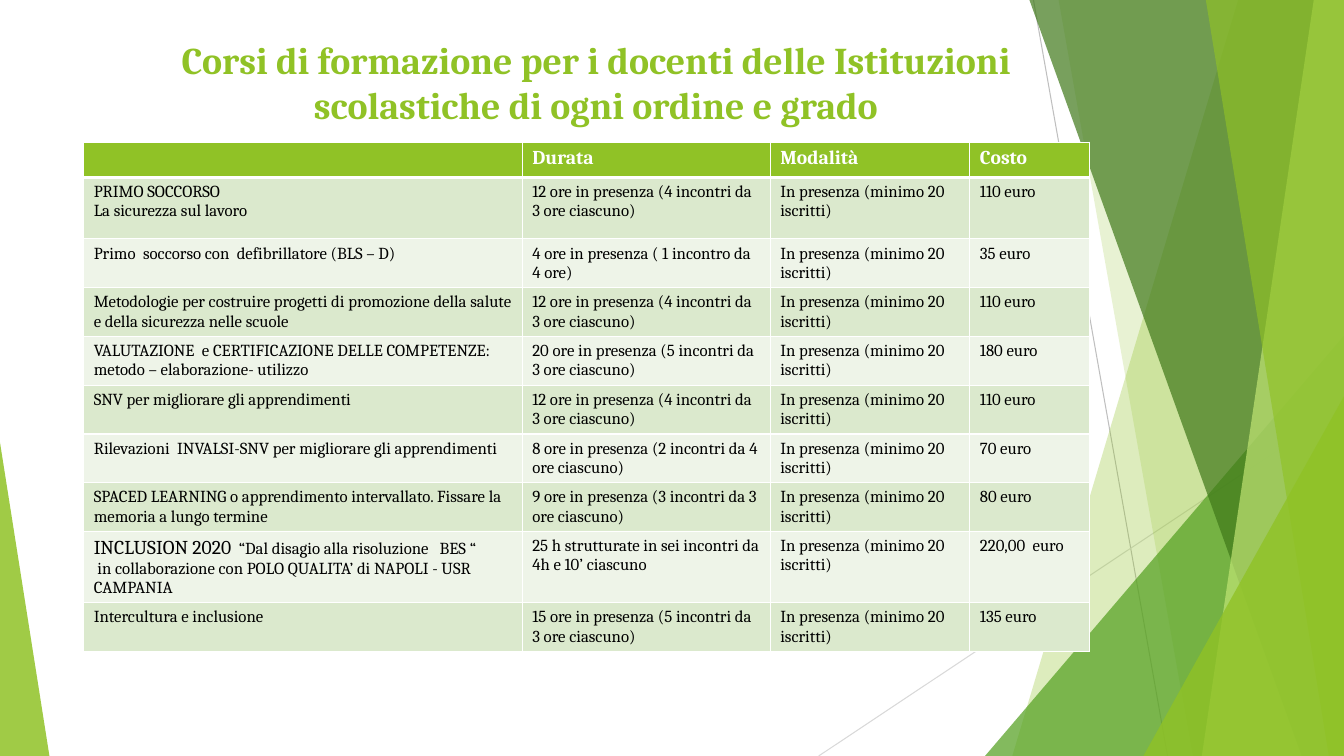
from dataclasses import dataclass

from lxml import etree
from pptx import Presentation
from pptx.dml.color import RGBColor
from pptx.enum.shapes import MSO_CONNECTOR, MSO_SHAPE
from pptx.enum.text import MSO_ANCHOR, PP_ALIGN
from pptx.oxml.ns import qn
from pptx.util import Inches, Pt

STRAIGHT = MSO_CONNECTOR.STRAIGHT
TRIANGLE = MSO_SHAPE.ISOSCELES_TRIANGLE
TOP = MSO_ANCHOR.TOP
CENTER = PP_ALIGN.CENTER

LIME = RGBColor(0x90, 0xC2, 0x26)
GREEN = RGBColor(0x54, 0xA0, 0x21)
FOREST = RGBColor(0x3F, 0x78, 0x19)
PALE_LIME = RGBColor(0xC0, 0xE4, 0x74)
BAND_DARK = RGBColor(0xDB, 0xE9, 0xCD)
BAND_LIGHT = RGBColor(0xEE, 0xF4, 0xE8)
GREY = RGBColor(0xBF, 0xBF, 0xBF)
LIGHT_GREY = RGBColor(0xD9, 0xD9, 0xD9)
WHITE = RGBColor(0xFF, 0xFF, 0xFF)
BLACK = RGBColor(0, 0, 0)

FONT = "Cambria"
WIDTH, HEIGHT = 13.33, 7.5


@dataclass
class Ray:
    start: tuple[float, float]
    end: tuple[float, float]
    color: RGBColor


@dataclass
class Panel:
    """A band reaching the right edge, with a slanted left side."""
    top_x: float
    bottom_x: float
    color: RGBColor
    opacity: int


@dataclass
class Corner:
    """A triangle standing on the bottom edge; apex is 0 (left) or 1 (right)."""
    left: float
    top: float
    width: float
    apex: int
    color: RGBColor
    opacity: int


@dataclass
class Course:
    name: str
    duration: str
    cost: str
    lead: str = ""


RAYS = [
    Ray((10.25, 0), (11.58, HEIGHT), GREY),
    Ray((WIDTH, 4.03), (8.12, HEIGHT), LIGHT_GREY),
]
FACETS = [
    Panel(12.28, 10.04, LIME, 30),
    Panel(10.5, 11.83, LIME, 20),
    Corner(9.77, 3.33, 3.56, 1, GREEN, 72),
    Panel(10.21, 12.91, FOREST, 70),
    Panel(13.03, 11.92, PALE_LIME, 70),
    Panel(11.96, 13.18, LIME, 65),
    Corner(11.34, 3.93, 1.99, 1, LIME, 80),
    Corner(0, 4.39, 0.49, 0, LIME, 85),
]

TITLE = "Corsi di formazione per i docenti delle Istituzioni scolastiche di ogni ordine e grado"
HEADINGS = ["", "Durata", "Modalità", "Costo"]
MODE = "In presenza (minimo 20 iscritti)"
COURSES = [
    Course("PRIMO SOCCORSO\nLa sicurezza sul lavoro",
           "12 ore in presenza (4 incontri da 3 ore ciascuno)", "110 euro"),
    Course("Primo  soccorso con  defibrillatore (BLS – D)",
           "4 ore in presenza ( 1 incontro da 4 ore)", "35 euro"),
    Course("Metodologie per costruire progetti di promozione della salute e della sicurezza nelle scuole",
           "12 ore in presenza (4 incontri da 3 ore ciascuno)", "110 euro"),
    Course("VALUTAZIONE  e CERTIFICAZIONE DELLE COMPETENZE: metodo – elaborazione- utilizzo",
           "20 ore in presenza (5 incontri da 3 ore ciascuno)", "180 euro"),
    Course("SNV per migliorare gli apprendimenti",
           "12 ore in presenza (4 incontri da 3 ore ciascuno)", "110 euro"),
    Course("Rilevazioni  INVALSI-SNV per migliorare gli apprendimenti",
           "8 ore in presenza (2 incontri da 4 ore ciascuno)", "70 euro"),
    Course("SPACED LEARNING o apprendimento intervallato. Fissare la memoria a lungo termine",
           "9 ore in presenza (3 incontri da 3 ore ciascuno)", "80 euro"),
    Course("  “Dal disagio alla risoluzione   BES “\n"
           " in collaborazione con POLO QUALITA’ di NAPOLI - USR CAMPANIA",
           "25 h strutturate in sei incontri da 4h e 10’ ciascuno", "220,00  euro",
           lead="INCLUSION 2020"),
    Course("Intercultura e inclusione",
           "15 ore in presenza (5 incontri da 3 ore ciascuno)", "135 euro"),
]
COLUMN_WIDTHS = [4.35, 2.46, 1.98, 1.19]
ROW_HEIGHTS = [0.35, 0.61] + [0.41] * (len(COURSES) - 1)


def draw_ray(page, ray: Ray) -> None:
    points = [Inches(value) for value in ray.start + ray.end]
    line = page.shapes.add_connector(STRAIGHT, *points)
    line.line.color.rgb = ray.color
    line.line.width = Pt(0.75)
    etree.SubElement(line._element.spPr, qn("a:effectLst"))


def draw_facet(page, facet: Panel | Corner) -> None:
    if isinstance(facet, Panel):
        builder = page.shapes.build_freeform(Inches(facet.top_x), 0)
        corners = [(WIDTH, 0), (WIDTH, HEIGHT), (facet.bottom_x, HEIGHT)]
        builder.add_line_segments([(Inches(x), Inches(y)) for x, y in corners], close=True)
        shape = builder.convert_to_shape()
    else:
        shape = page.shapes.add_shape(
            TRIANGLE, Inches(facet.left), Inches(facet.top),
            Inches(facet.width), Inches(HEIGHT - facet.top))
        shape.adjustments[0] = facet.apex
    shape.shadow.inherit = False
    shape.line.fill.background()
    shape.fill.solid()
    shape.fill.fore_color.rgb = facet.color
    color = shape._element.spPr.find(qn("a:solidFill"))[0]
    etree.SubElement(color, qn("a:alpha"), val=str(facet.opacity * 1000))


def format_text(frame, size: float, color: RGBColor, bold: bool) -> None:
    for para in frame.paragraphs:
        para.font.size = Pt(size)
        for span in para.runs:
            span.font.name = FONT
            span.font.size = Pt(size)
            span.font.bold = bold
            span.font.color.rgb = color


def set_borders(cell, bottom: float) -> None:
    properties = cell._tc.get_or_add_tcPr()
    sides = {"a:lnL": 1, "a:lnR": 1, "a:lnT": 1, "a:lnB": bottom}
    for position, (side, points) in enumerate(sides.items()):
        line = etree.Element(qn(side), w=str(Pt(points)))
        fill = etree.SubElement(line, qn("a:solidFill"))
        etree.SubElement(fill, qn("a:srgbClr"), val=str(WHITE))
        properties.insert(position, line)


def fill_row(table, index: int, texts: list[str]) -> None:
    header = index == 0
    band = LIME if header else BAND_DARK if index % 2 else BAND_LIGHT
    for column, text in enumerate(texts):
        cell = table.cell(index, column)
        cell.text_frame.text = text
        format_text(cell.text_frame, 14 if header else 12, WHITE if header else BLACK, header)
        cell.fill.solid()
        cell.fill.fore_color.rgb = band
        set_borders(cell, 3 if header or index == 0 else 1)


def add_lead(cell, lead: str) -> None:
    """Put a larger opening run before the first paragraph's text."""
    para = cell.text_frame.paragraphs[0]
    rest = para.text
    para.text = lead
    para.add_run().text = rest
    format_text(cell.text_frame, 12, BLACK, False)
    para.runs[0].font.size = Pt(14)


def add_courses(page) -> None:
    table = page.shapes.add_table(
        len(ROW_HEIGHTS), len(COLUMN_WIDTHS), Inches(0.83), Inches(1.41),
        Inches(sum(COLUMN_WIDTHS)), Inches(sum(ROW_HEIGHTS))).table
    for column, width in zip(table.columns, COLUMN_WIDTHS):
        column.width = Inches(width)
    for row, height in zip(table.rows, ROW_HEIGHTS):
        row.height = Inches(height)
    fill_row(table, 0, HEADINGS)
    for index, course in enumerate(COURSES, start=1):
        fill_row(table, index, [course.name, course.duration, MODE, course.cost])
        if course.lead:
            add_lead(table.cell(index, 0), course.lead)


def add_title(page) -> None:
    title = page.shapes.title
    title.left, title.top = Inches(1.33), Inches(0.31)
    title.width, title.height = Inches(9.16), Inches(1.25)
    frame = title.text_frame
    frame.text = TITLE
    frame.word_wrap = True
    frame.vertical_anchor = TOP
    frame.paragraphs[0].alignment = CENTER
    format_text(frame, 27, LIME, True)


def main() -> None:
    deck = Presentation()
    deck.slide_width, deck.slide_height = Inches(WIDTH), Inches(HEIGHT)
    page = deck.slides.add_slide(deck.slide_layouts[5])
    for ray in RAYS:
        draw_ray(page, ray)
    for facet in FACETS:
        draw_facet(page, facet)
    add_title(page)
    add_courses(page)
    deck.save("out.pptx")


if __name__ == "__main__":
    main()
